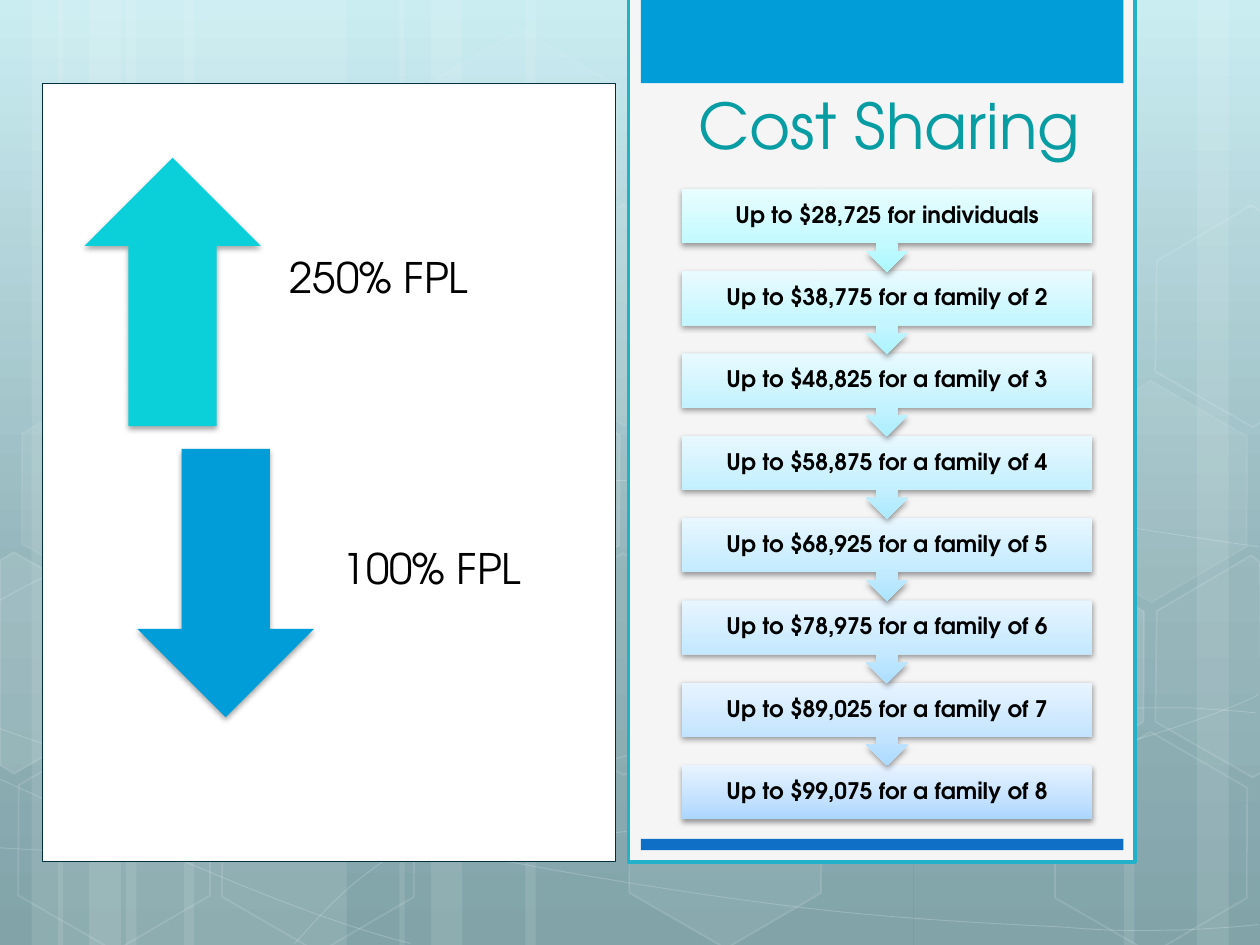
from lxml import etree
from pptx import Presentation
from pptx.dml.color import RGBColor
from pptx.enum.shapes import MSO_SHAPE
from pptx.enum.text import MSO_ANCHOR, PP_ALIGN
from pptx.oxml.ns import qn
from pptx.util import Cm, Pt

RECTANGLE, HEXAGON = MSO_SHAPE.RECTANGLE, MSO_SHAPE.HEXAGON
UP_ARROW, DOWN_ARROW = MSO_SHAPE.UP_ARROW, MSO_SHAPE.DOWN_ARROW
CALLOUT = MSO_SHAPE.DOWN_ARROW_CALLOUT
LEFT, CENTER = PP_ALIGN.LEFT, PP_ALIGN.CENTER
MIDDLE, BOTTOM = MSO_ANCHOR.MIDDLE, MSO_ANCHOR.BOTTOM

# Content
TITLE = "Cost Sharing"
LIMITS = [
    ("$28,725", "individuals"),
    ("$38,775", "a family of 2"),
    ("$48,825", "a family of 3"),
    ("$58,875", "a family of 4"),
    ("$68,925", "a family of 5"),
    ("$78,975", "a family of 6"),
    ("$89,025", "a family of 7"),
    ("$99,075", "a family of 8"),
]
# text, arrow shape, left, top, colour
LEVELS = [
    ("250% FPL", UP_ARROW, 1.7, 3.18, "0BD0D9"),
    ("100% FPL", DOWN_ARROW, 2.77, 9.05, "009DD9"),
]

THEME = {
    "font": "TeX Gyre Adventor",
    "title_size": 36, "level_size": 24, "limit_size": 13,
    "title": "089CA3", "text": "000000", "white": "FFFFFF", "shadow": "000000",
    "panel": "F5F5F5", "panel_line": "21B2C9", "card_line": "02303E",
    "top_bar": "009DD9", "bottom_bar": "0F6FC6",
    "background": [(0, "C4EBF1"), (62, "88ADB3"), (100, "749AA0")],
    # position, red, green in first box, green in last box; blue is always FF
    "limit_stops": [(0, 0xAB, 0xF8, 0xD6), (35, 0xC3, 0xFA, 0xE1), (100, 0xE8, 0xFD, 0xF3)],
}

# Backdrop, all in centimetres
WIDTH, HEIGHT = 25.4, 19.05
STRIPES = [  # left, width
    (2.54, 4.45), (0, 1.27), (0.64, 2.11), (3.71, 4.45), (1.17, 1.27), (1.8, 2.11),
    (18.42, 4.45), (24.13, 1.27), (22.66, 2.11), (10.59, 7.82), (8.05, 1.27), (8.69, 2.11),
]
CURVES = [  # start point, then pieces: two control points and an end, or only an end
    ((-0.03, 17.09), [
        (1.36, 17.17, 2.72, 17.25, 4.62, 17.22), (6.53, 17.2, 8.86, 17.15, 11.4, 16.89),
        (13.97, 16.64, 17.58, 16.15, 19.89, 15.67), (22.23, 15.19, 24.59, 14.43, 25.37, 14)]),
    ((-0.03, 12.12), [
        (0.69, 11.71, 1.42, 11.33, 2.87, 10.95), (4.32, 10.57, 6.35, 10.01, 8.61, 9.83),
        (10.87, 9.65, 13.59, 9.63, 16.38, 9.83), (19.18, 10.03, 23.85, 10.82, 25.37, 11.02)]),
    ((-0.08, 15.67), [(3, 17.07, 6.07, 18.47, 8.28, 19.02)]),
    ((-0.03, 14.68), [
        (0.76, 14.96, 1.55, 15.24, 3.02, 15.65), (4.52, 16.03, 6.73, 16.66, 8.84, 17.09),
        (10.95, 17.53, 13.64, 17.98, 15.72, 18.24), (17.83, 18.52, 20.09, 18.62, 21.44, 18.69),
        (22.78, 18.8, 23.14, 18.75, 23.77, 18.75), (24.43, 18.72, 24.89, 18.69, 25.37, 18.64)]),
    ((5.94, 19.02), [
        (6.4, 18.52, 6.83, 18.01, 7.47, 17.55), (8.08, 17.09, 8.92, 16.59, 9.63, 16.23),
        (10.34, 15.88, 10.77, 15.72, 11.71, 15.47), (12.65, 15.21, 14.35, 14.86, 15.24, 14.68),
        (16.13, 14.5, 16.26, 14.5, 17.04, 14.45), (17.83, 14.38, 19.08, 14.3, 19.96, 14.27),
        (20.83, 14.25, 22.3, 14.27, 22.3, 14.27), (23.98, 14.27),
        (24.46, 14.3, 24.87, 14.33, 25.1, 14.35), (25.32, 14.38, 25.25, 14.35, 25.32, 14.38)]),
]
HEXAGONS = [  # left, top, fill opacity, line opacity
    (8.33, 7.95, 10, 12), (10.34, 11.46, 0, 12), (10.36, 4.42, 7, 8), (8.28, 0.91, 4, 8),
    (12.4, 14.96, 6, 12), (0.08, 15.01, 0, 12), (0.15, 7.92, 7, 8), (4.19, 15.04, 0, 12),
    (18.9, 11.51, 10, 12), (20.98, 15.06, 0, 12), (20.98, 7.98, 7, 8),
]
CUT_HEXAGONS = [  # fill opacity, corners
    (10, [(0, 11.3), (0.28, 11.13), (2.21, 12.24), (2.21, 14.48), (0.28, 15.6), (0, 15.42)]),
    (4, [(23.32, 12.32), (25.22, 11.2), (25.4, 11.33), (25.43, 15.57), (25.25, 15.67),
         (23.29, 14.55)]),
    (0, [(23.32, 5.26), (25.22, 4.14), (25.43, 4.27), (25.43, 8.51), (25.25, 8.61),
         (23.29, 7.49)]),
]


def set_opacity(parent, percent):
    color = parent.find(qn("a:solidFill")).find(qn("a:srgbClr"))
    etree.SubElement(color, qn("a:alpha")).set("val", str(percent * 1000))


def set_gradient(fill, owner, stops):
    """Fill from top to bottom with any number of stops."""
    fill.gradient()
    gradient = next(owner.iter(qn("a:gradFill")))
    stop_list = gradient.find(qn("a:gsLst"))
    for stop in list(stop_list):
        stop_list.remove(stop)
    for position, color in stops:
        stop = etree.SubElement(stop_list, qn("a:gs"), pos=str(position * 1000))
        etree.SubElement(stop, qn("a:srgbClr"), val=color)
    gradient.find(qn("a:lin")).set("ang", "5400000")


def paint(shape, fill=None, opacity=100, line=None, weight=1, line_opacity=100, shadow=0):
    properties = shape._element.spPr
    shape.shadow.inherit = False
    if fill and opacity:
        shape.fill.solid()
        shape.fill.fore_color.rgb = RGBColor.from_string(fill)
        if opacity < 100:
            set_opacity(properties, opacity)
    else:
        shape.fill.background()
    if line:
        shape.line.color.rgb = RGBColor.from_string(line)
        shape.line.width = Pt(weight)
        if line_opacity < 100:
            set_opacity(properties.find(qn("a:ln")), line_opacity)
    else:
        shape.line.fill.background()
    if shadow:
        outer = etree.SubElement(properties.find(qn("a:effectLst")), qn("a:outerShdw"),
                                 blurRad="40000", dist="21000", dir="5400000", rotWithShape="0")
        color = etree.SubElement(outer, qn("a:srgbClr"), val=THEME["shadow"])
        etree.SubElement(color, qn("a:alpha"), val=str(shadow * 1000))


def add_block(page, kind, area, **style):
    shape = page.shapes.add_shape(kind, *map(Cm, area))
    paint(shape, **style)
    return shape


def add_outline(page, start, pieces, closed=False, **style):
    """Draw an outline; pieces of six numbers become Bezier curves."""
    builder = page.shapes.build_freeform(*map(Cm, start))
    builder.add_line_segments([tuple(map(Cm, piece[-2:])) for piece in pieces], close=closed)
    shape = builder.convert_to_shape()
    segments = list(shape._element.iter(qn("a:lnTo")))
    for segment, piece in zip(segments, pieces):
        if len(piece) == 6:
            segment.tag = qn("a:cubicBezTo")
            segment.remove(segment[0])
            for x, y in zip(piece[::2], piece[1::2]):
                etree.SubElement(segment, qn("a:pt"), x=str(Cm(x) - shape.left),
                                 y=str(Cm(y) - shape.top))
    paint(shape, **style)


def add_text(page, text, area, size, color=THEME["text"], bold=False, align=CENTER,
             anchor=MIDDLE, insets=(0.25, 0.25, 0.25, 0.25), spacing=0.9):
    box = page.shapes.add_textbox(*map(Cm, area))
    frame = box.text_frame
    frame.word_wrap = True
    frame.vertical_anchor = anchor
    frame.margin_left, frame.margin_top, frame.margin_right, frame.margin_bottom = map(Cm, insets)
    para = frame.paragraphs[0]
    para.alignment = align
    para.line_spacing = spacing
    span = para.add_run()
    span.text = text
    span.font.name = THEME["font"]
    span.font.size = Pt(size)
    span.font.bold = bold
    span.font.color.rgb = RGBColor.from_string(color)


def add_backdrop(page):
    white = THEME["white"]
    set_gradient(page.background.fill, page._element, THEME["background"])
    for left, width in STRIPES:
        add_block(page, RECTANGLE, (left, 0, width, HEIGHT), fill=white, opacity=10)
    for start, pieces in CURVES:
        add_outline(page, start, pieces, line=white, weight=0.5, line_opacity=20)
    for left, top, opacity, line_opacity in HEXAGONS:
        hexagon = add_block(page, HEXAGON, (left, top, 4.45, 3.86), fill=white, opacity=opacity,
                            line=white, line_opacity=line_opacity)
        hexagon.rotation = 30
        hexagon.adjustments[0] = 0.285
    for opacity, (start, *corners) in CUT_HEXAGONS:
        add_outline(page, start, corners, closed=True, fill=white, opacity=opacity,
                    line=white, line_opacity=12)


def add_limits(page):
    left, top, last_top, width, box_height, callout_height = 13.75, 3.81, 15.42, 8.26, 1.09, 1.67
    last = len(LIMITS) - 1
    pitch = (last_top - top) / last
    # The lowest box goes to the back, so each arrow lies over the box below it
    for index, (amount, household) in reversed(list(enumerate(LIMITS))):
        y = top + index * pitch
        kind, height = (RECTANGLE, box_height) if index == last else (CALLOUT, callout_height)
        block = add_block(page, kind, (left, y, width, height), shadow=38)
        stops = [(100 - position, f"{red:02X}{first + (final - first) * index // last:02X}FF")
                 for position, red, first, final in reversed(THEME["limit_stops"])]
        set_gradient(block.fill, block._element, stops)
        add_text(page, f"Up to {amount} for {household}", (left, y, width, box_height),
                 THEME["limit_size"], bold=True)


def add_levels(page):
    width, height = 3.56, 5.41
    for text, kind, left, top, color in LEVELS:
        add_block(page, kind, (left, top, width, height), fill=color, shadow=35)
        add_text(page, text, (left + width + 0.1, top, 6.05, height), THEME["level_size"],
                 align=LEFT, insets=(0.48, 0, 0.48, 0.48))


def main():
    deck = Presentation()
    deck.slide_width, deck.slide_height = Cm(WIDTH), Cm(HEIGHT)
    page = deck.slides.add_slide(deck.slide_layouts[6])
    add_backdrop(page)
    # Right panel with its bars, and the left card
    add_block(page, RECTANGLE, (12.67, -0.05, 10.21, 17.42), fill=THEME["panel"],
              line=THEME["panel_line"], weight=2.25)
    add_block(page, RECTANGLE, (12.92, -0.05, 9.73, 1.73), fill=THEME["top_bar"])
    add_block(page, RECTANGLE, (0.85, 1.68, 11.56, 15.69), fill=THEME["white"],
              line=THEME["card_line"], weight=0.25)
    add_block(page, RECTANGLE, (12.92, 16.91, 9.73, 0.23), fill=THEME["bottom_bar"])
    # Title, income limits and poverty levels
    add_text(page, TITLE, (13.34, 1.7, 9.17, 1.7), THEME["title_size"], color=THEME["title"],
             anchor=BOTTOM, insets=(0.25, 0.13, 0.25, 0.13), spacing=1.0)
    add_limits(page)
    add_levels(page)
    deck.save("out.pptx")


if __name__ == "__main__":
    main()
